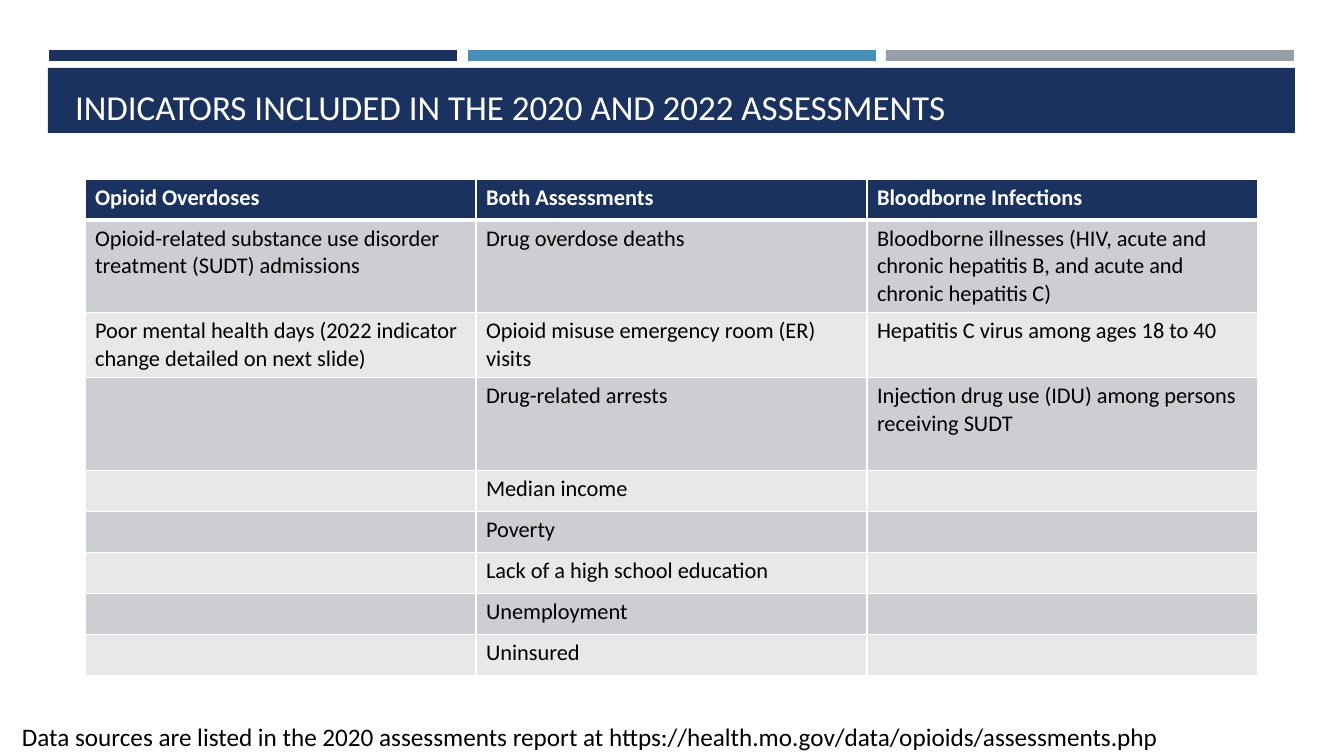
import lxml.etree
import pptx
import pptx.dml.color
import pptx.enum.shapes
import pptx.enum.text
import pptx.oxml.ns
import pptx.util

PX = 914400 / 100.8
FONT = "Calibri"
COLORS = {
    "navy": "1A3260",
    "blue": "4590B8",
    "gray": "969FA7",
    "dark_band": "CDCED2",
    "light_band": "E8E8EA",
    "white": "FFFFFF",
    "black": "000000",
}
HEADER = ["Opioid Overdoses", "Both Assessments", "Bloodborne Infections"]
INDICATORS = [
    ["Opioid-related substance use disorder treatment (SUDT) admissions",
     "Drug overdose deaths",
     "Bloodborne illnesses (HIV, acute and chronic hepatitis B, and acute and chronic hepatitis C)"],
    ["Poor mental health days (2022 indicator change detailed on next slide)",
     "Opioid misuse emergency room (ER) visits",
     "Hepatitis C virus among ages 18 to 40"],
    ["", "Drug-related arrests", "Injection drug use (IDU) among persons receiving SUDT"],
    ["", "Median income", ""],
    ["", "Poverty", ""],
    ["", "Lack of a high school education", ""],
    ["", "Unemployment", ""],
    ["", "Uninsured", ""],
]
ROW_HEIGHTS = [41, 92, 65, 93] + [41] * 5


def px(*lengths):
    return [pptx.util.Emu(round(length * PX)) for length in lengths]


def add_run(paragraph, text, size, color, bold=False):
    run = paragraph.add_run()
    run.text = text
    run.font.name = FONT
    run.font.size = pptx.util.Pt(size)
    run.font.bold = bold
    run.font.color.rgb = pptx.dml.color.RGBColor.from_string(COLORS[color])


presentation = pptx.Presentation()
presentation.slide_width, presentation.slide_height = px(1344, 756)
slide = presentation.slides.add_slide(presentation.slide_layouts[5])

# Bars and title band
bars = [
    (49, 50, 408, 11, "navy"),
    (468, 50, 408, 11, "blue"),
    (886, 50, 408, 11, "gray"),
    (48, 68, 1247, 65, "navy"),
]
for left, top, width, height, color in bars:
    bar = slide.shapes.add_shape(
        pptx.enum.shapes.MSO_SHAPE.RECTANGLE, *px(left, top, width, height))
    bar.shadow.inherit = False
    bar.fill.solid()
    bar.fill.fore_color.rgb = pptx.dml.color.RGBColor.from_string(COLORS[color])
    bar.line.fill.background()

# Indicator table
table = slide.shapes.add_table(
    len(ROW_HEIGHTS), len(HEADER), *px(85, 179, 1173, sum(ROW_HEIGHTS))).table
for row, height in zip(table.rows, ROW_HEIGHTS):
    row.height = px(height)[0]

for row_index, texts in enumerate([HEADER] + INDICATORS):
    is_header = row_index == 0
    if is_header:
        fill = "navy"
    else:
        fill = "dark_band" if row_index % 2 else "light_band"
    thick_side = {0: "lnB", 1: "lnT"}.get(row_index)
    for column_index, text in enumerate(texts):
        cell = table.cell(row_index, column_index)
        properties = cell._tc.get_or_add_tcPr()
        for side in ("lnL", "lnR", "lnT", "lnB"):
            points = 3 if side == thick_side else 1
            border = lxml.etree.SubElement(
                properties, pptx.oxml.ns.qn("a:" + side), w=str(pptx.util.Pt(points)))
            border_fill = lxml.etree.SubElement(border, pptx.oxml.ns.qn("a:solidFill"))
            lxml.etree.SubElement(
                border_fill, pptx.oxml.ns.qn("a:srgbClr"), val=COLORS["white"])
        cell.fill.solid()
        cell.fill.fore_color.rgb = pptx.dml.color.RGBColor.from_string(COLORS[fill])
        if text:
            add_run(cell.text_frame.paragraphs[0], text, 16,
                    "white" if is_header else "black", is_header)

# Data source line
source = slide.shapes.add_textbox(*px(12, 716, 1320, 40))
source.text_frame.word_wrap = True
add_run(
    source.text_frame.paragraphs[0],
    "Data sources are listed in the 2020 assessments report at "
    "https://health.mo.gov/data/opioids/assessments.php",
    18, "black")

# Title, brought in front of its band
title = slide.shapes.title
title.left, title.top, title.width, title.height = px(65, 78, 1216, 55)
title.text_frame.word_wrap = True
title.text_frame.auto_size = pptx.enum.text.MSO_AUTO_SIZE.NONE
title.text_frame.vertical_anchor = pptx.enum.text.MSO_ANCHOR.BOTTOM
title_paragraph = title.text_frame.paragraphs[0]
title_paragraph.alignment = pptx.enum.text.PP_ALIGN.LEFT
add_run(title_paragraph, "INDICATORS INCLUDED IN THE 2020 AND 2022 ASSESSMENTS", 25, "white")
title._element.getparent().append(title._element)

presentation.save("out.pptx")
